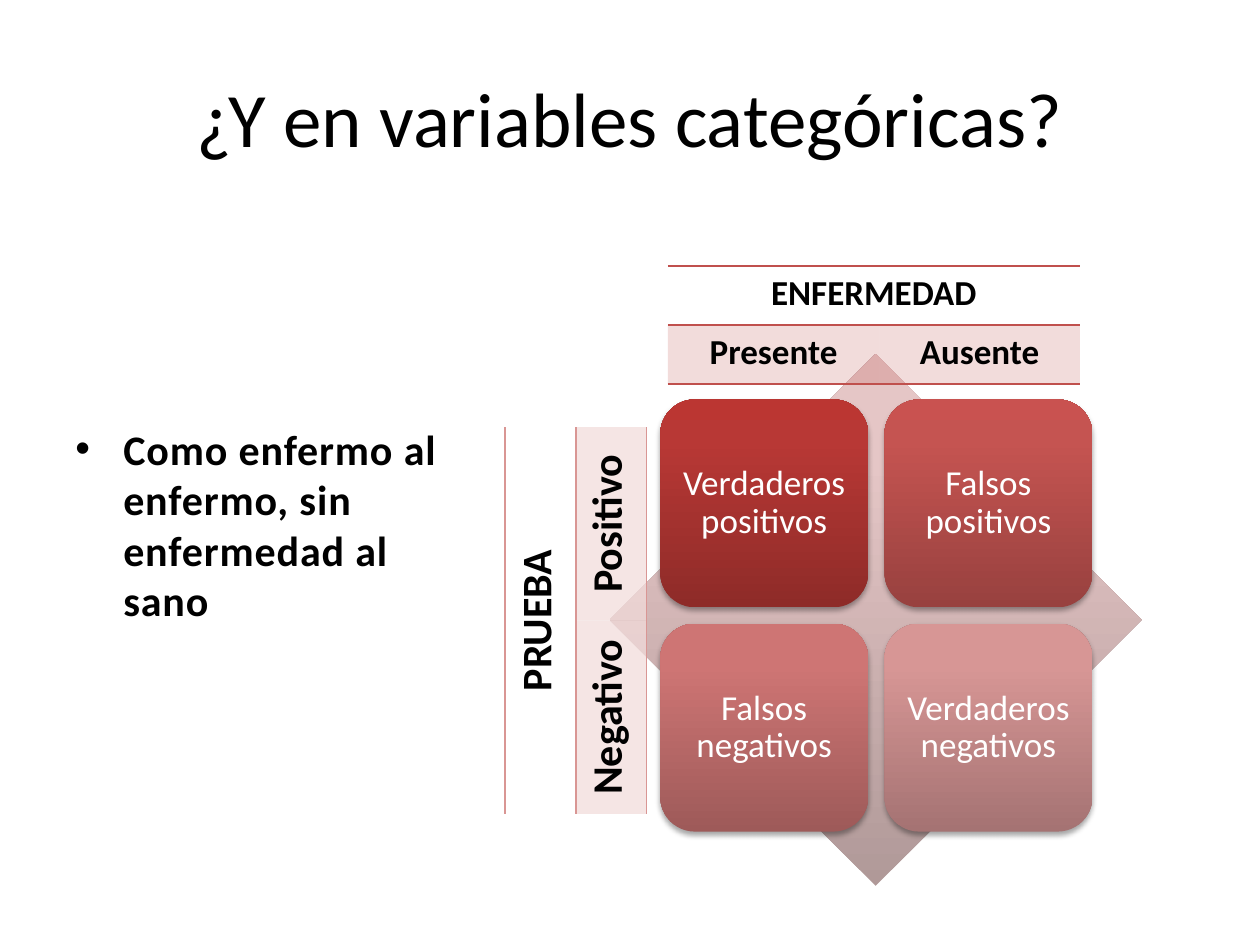
"""Build the slide on true and false results of a diagnostic test."""
from dataclasses import dataclass
from typing import NamedTuple

from pptx import Presentation
from pptx.dml.color import RGBColor
from pptx.enum.shapes import MSO_SHAPE
from pptx.enum.text import MSO_ANCHOR, PP_ALIGN
from pptx.oxml import parse_xml
from pptx.oxml.ns import nsdecls
from pptx.util import Inches, Pt

DIAMOND, ROUND = MSO_SHAPE.DIAMOND, MSO_SHAPE.ROUNDED_RECTANGLE
CENTER, LEFT = PP_ALIGN.CENTER, PP_ALIGN.LEFT
MIDDLE, TOP = MSO_ANCHOR.MIDDLE, MSO_ANCHOR.TOP
COLS, ROWS, UNIT = 100, 75, Inches(0.1)
NS = nsdecls("a")
PLAIN = "{2D5ABB26-0587-4C30-8999-92F81FD0307C}"


@dataclass(frozen=True)
class Theme:
    face: str = "Calibri"
    ink: str = "000000"
    light: str = "FFFFFF"
    red: str = "C0504D"
    rose: str = "D99694"
    blush: str = "F2DCDB"
    title: int = 44
    body: int = 24
    label: int = 20


class Box(NamedTuple):
    col: float
    row: float
    wide: float
    high: float

    def lengths(self) -> list[int]:
        return [round(n * UNIT) for n in self]


class Tile(NamedTuple):
    text: str
    col: int
    row: int
    stops: tuple[str, str, str]


class Cell(NamedTuple):
    text: str
    row: int
    col: int
    tint: bool


class Grid(NamedTuple):
    box: Box
    widths: tuple[float, float]
    cells: tuple[Cell, ...]
    join: tuple[int, int]
    sides: str
    line: str
    fill: str
    alpha: int
    size: int
    turn: bool


THEME = Theme()
CROSS = Box(48.4, 28.1, 42.2, 42.2)
SIDE, STEP = 16.5, 17.8
FIRST = (52.4, 31.7)
TILES = (
    Tile("Verdaderos positivos", 0, 0, ("8E2B28", "B83835", "BB3632")),
    Tile("Falsos positivos", 1, 0, ("98413F", "C55451", "C95250")),
    Tile("Falsos negativos", 0, 1, ("9E5A59", "CE7574", "D07472")),
    Tile("Verdaderos negativos", 1, 1, ("A57373", "D79695", "D99594")),
)
GRIDS = (
    Grid(Box(53, 21.1, 32.7, 9.4), (16.8, 15.9),
         (Cell("ENFERMEDAD", 0, 0, False), Cell("Presente", 1, 0, True),
          Cell("Ausente", 1, 1, True)),
         (0, 1), "TB", THEME.red, THEME.red, 20, THEME.label, False),
    Grid(Box(40.1, 33.9, 11.2, 30.7), (5.6, 5.6),
         (Cell("PRUEBA", 0, 0, False), Cell("Positivo", 0, 1, True),
          Cell("Negativo", 1, 1, True)),
         (1, 0), "LR", THEME.rose, THEME.blush, 73, THEME.body, True),
)


def style(par, size: int, color: str, bold: bool = False, align=CENTER) -> None:
    """Set the look of a whole paragraph."""
    par.alignment = align
    font = par.font
    font.name, font.size, font.bold = THEME.face, Pt(size), bold
    font.color.rgb = RGBColor.from_string(color)


def add_text(slide, box: Box, text: str, anchor):
    """Add a wrapped text box and return its paragraph."""
    frame = slide.shapes.add_textbox(*box.lengths()).text_frame
    frame.word_wrap, frame.vertical_anchor = True, anchor
    par = frame.paragraphs[0]
    par.text = text
    return par


def add_form(slide, kind, box: Box, stops: tuple[str, str, str], shade: bool = False):
    """Add a shape filled with a gradient that rises from its base."""
    form = slide.shapes.add_shape(kind, *box.lengths())
    form.shadow.inherit = False
    form.line.fill.background()
    marks = "".join(f'<a:gs pos="{pos}"><a:srgbClr val="{color}"/></a:gs>'
                    for pos, color in zip((0, 80000, 100000), stops))
    props = form.element.spPr
    props.find("{*}prstGeom").addnext(parse_xml(
        f'<a:gradFill {NS} rotWithShape="1"><a:gsLst>{marks}</a:gsLst>'
        '<a:lin ang="16200000" scaled="0"/></a:gradFill>'))
    if shade:
        props.find("{*}effectLst").append(parse_xml(
            f'<a:outerShdw {NS} blurRad="{Pt(3.1)}" dist="{Pt(1.8)}" dir="5400000" '
            'rotWithShape="0"><a:srgbClr val="000000"><a:alpha val="35000"/>'
            '</a:srgbClr></a:outerShdw>'))
    return form


def add_tile(slide, tile: Tile) -> None:
    """Add one result of the two-by-two matrix."""
    box = Box(FIRST[0] + tile.col * STEP, FIRST[1] + tile.row * STEP, SIDE, SIDE)
    frame = add_form(slide, ROUND, box, tile.stops, True).text_frame
    frame.word_wrap, frame.vertical_anchor = True, MIDDLE
    frame.margin_left = frame.margin_right = Inches(0.08)
    frame.margin_top = frame.margin_bottom = Inches(0.08)
    par = frame.paragraphs[0]
    par.text, par.line_spacing = tile.text, 0.9
    style(par, THEME.label, THEME.light)


def add_edge(cell, side: str, color: str) -> None:
    """Rule one side of a table cell."""
    cell._tc.get_or_add_tcPr().insert(0, parse_xml(
        f'<a:ln{side} {NS} w="{Pt(1)}"><a:solidFill><a:srgbClr val="{color}"/>'
        f'</a:solidFill></a:ln{side}>'))


def add_grid(slide, grid: Grid) -> None:
    """Add a heading table with one merged cell."""
    table = slide.shapes.add_table(2, 2, *grid.box.lengths()).table
    table.first_row = table.horz_banding = False
    table._tbl.tblPr.find("{*}tableStyleId").text = PLAIN
    for col, wide in zip(table.columns, grid.widths):
        col.width = round(wide * UNIT)
    table.cell(0, 0).merge(table.cell(*grid.join))
    for cell in table.iter_cells():
        cell.fill.background()
    for item in grid.cells:
        cell = table.cell(item.row, item.col)
        cell.text = item.text
        style(cell.text_frame.paragraphs[0], grid.size, THEME.ink, True)
        if item.tint:
            cell.fill.solid()
            cell.fill.fore_color.rgb = RGBColor.from_string(grid.fill)
            cell._tc.tcPr.find(".//{*}srgbClr").append(
                parse_xml(f'<a:alpha {NS} val="{grid.alpha * 1000}"/>'))
        if grid.turn:
            cell._tc.tcPr.set("vert", "vert270")
    for cell in table.iter_cells():
        for side in reversed(grid.sides):
            add_edge(cell, side, grid.line)


def add_point(slide, box: Box, text: str) -> None:
    """Add the bulleted remark."""
    par = add_text(slide, box, text, TOP)
    props = par._p.get_or_add_pPr()
    props.set("marL", str(Inches(0.38)))
    props.set("indent", str(-Inches(0.38)))
    props.append(parse_xml(f'<a:buFont {NS} typeface="Arial"/>'))
    props.append(parse_xml(f'<a:buChar {NS} char="•"/>'))
    style(par, THEME.body, THEME.ink, True, LEFT)
    par.runs[0]._r.get_or_add_rPr().set("spc", "50")


def main() -> None:
    """Draw the slide and save it."""
    deck = Presentation()
    deck.slide_width, deck.slide_height = COLS * UNIT, ROWS * UNIT
    slide = deck.slides.add_slide(deck.slide_layouts[6])
    title = add_text(slide, Box(5, 3, 90, 12.5), "¿Y en variables categóricas?", MIDDLE)
    style(title, THEME.title, THEME.ink)
    add_point(slide, Box(5, 33.1, 34.1, 18.4),
              "Como enfermo al enfermo, sin enfermedad al sano")
    add_form(slide, DIAMOND, CROSS, ("B09998", "E5C6C6", "E6C7C6"))
    for tile in TILES:
        add_tile(slide, tile)
    for grid in GRIDS:
        add_grid(slide, grid)
    deck.save("out.pptx")


if __name__ == "__main__":
    main()
